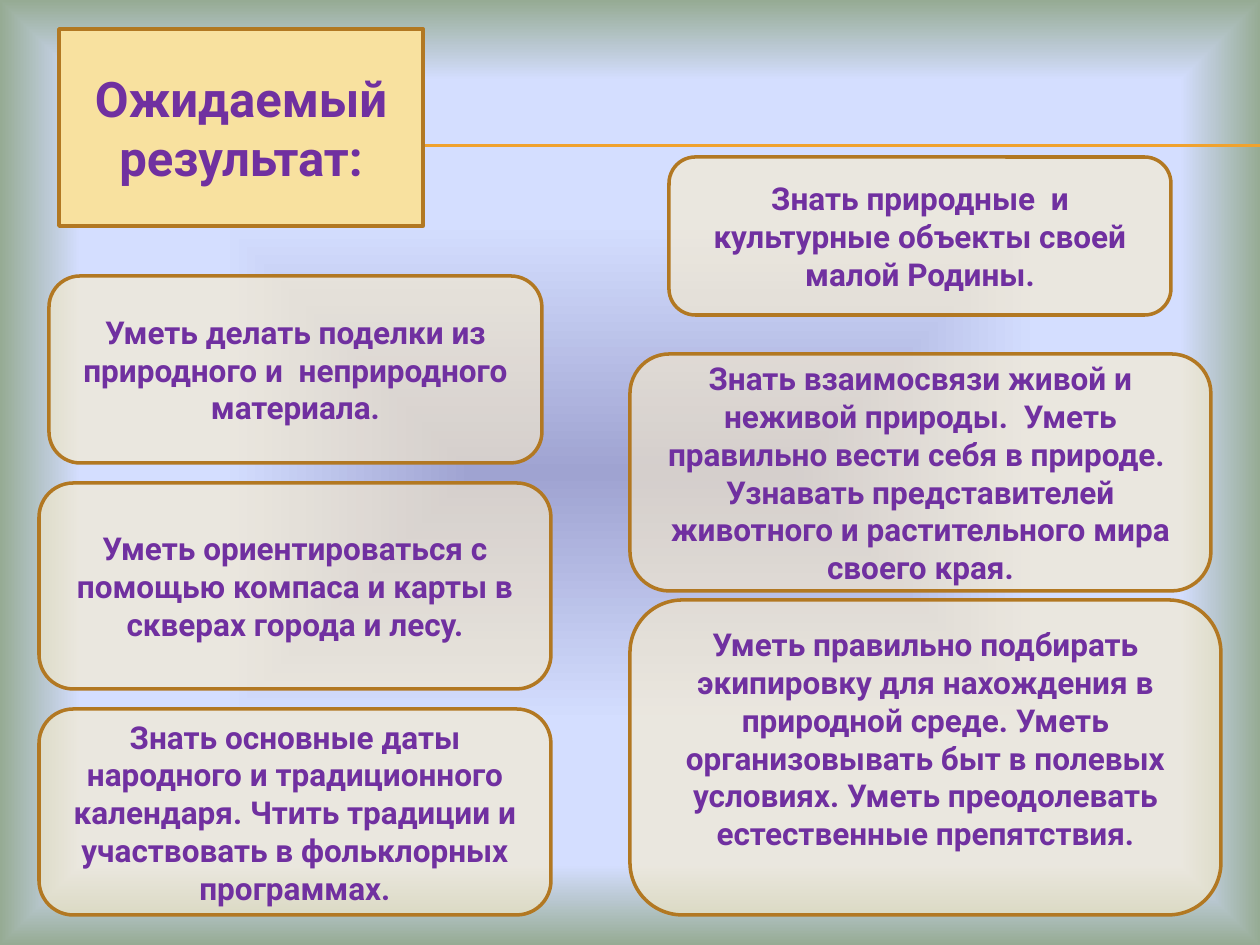
from pptx import Presentation
from pptx.dml.color import RGBColor
from pptx.enum.shapes import MSO_CONNECTOR, MSO_SHAPE
from pptx.enum.text import MSO_ANCHOR, MSO_AUTO_SIZE, PP_ALIGN
from pptx.oxml import parse_xml
from pptx.oxml.ns import nsdecls, qn
from pptx.util import Pt
from lxml.etree import SubElement

PX = 914400 // 126
WIDE, HIGH = 1260, 945
FONT = "Roboto"
COLORS = {"text": "7030A0", "edge": "B27822", "title": "F8E19F",
          "card": "FBEEC9", "rule": "F0A22E"}
GLOW = [(0, "9FA3D1"), (53, "D4DEFF"), (83, "D4DEFF"), (100, "96AB94")]
ALPHA = 59
RULES = [145, 146]
TITLE = ("Ожидаемый результат:", (59, 29, 364, 197))
# text, (left, top, width, height), bottom inset
CARDS = [
    ("Знать природные  и культурные объекты своей малой Родины.",
     (669, 157, 502, 158), 6),
    ("Уметь правильно подбирать экипировку для нахождения в природной среде. "
     "Уметь организовывать быт в полевых условиях. Уметь преодолевать "
     "естественные препятствия.", (630, 600, 591, 315), 44),
    ("Знать взаимосвязи живой и неживой природы.  Уметь правильно вести себя "
     "в природе.  Узнавать представителей животного и растительного мира "
     "своего края.", (630, 354, 581, 237), 6),
    ("Уметь делать поделки из природного и  неприродного материала.",
     (49, 276, 493, 187), 6),
    ("Знать основные даты народного и традиционного календаря. Чтить традиции "
     "и участвовать в фольклорных программах.", (39, 709, 512, 206), 6),
    ("Уметь ориентироваться с помощью компаса и карты в скверах города и лесу.",
     (39, 483, 512, 206), 6),
]


def color(name):
    return RGBColor.from_string(COLORS[name])


def paint(slide):
    """Fill the background with a gradient that spreads from the centre."""
    slide.background.fill.solid()
    back = slide.element.find(".//" + qn("p:bgPr"))
    stops = "".join(f'<a:gs pos="{pos * 1000}"><a:srgbClr val="{hue}"/></a:gs>'
                    for pos, hue in GLOW)
    back.replace(back[0], parse_xml(
        f'<a:gradFill {nsdecls("a")} rotWithShape="1"><a:gsLst>{stops}</a:gsLst>'
        '<a:path path="rect"><a:fillToRect l="50000" t="50000" r="50000" '
        'b="50000"/></a:path></a:gradFill>'.replace('"rect"', '"shape"')))


def rule(slide, y):
    line = slide.shapes.add_connector(
        MSO_CONNECTOR.STRAIGHT, 70 * PX, y * PX, WIDE * PX, y * PX)
    line.line.color.rgb = color("rule")
    line.line.width = Pt(0.75)
    SubElement(line.element.spPr, qn("a:effectLst"))


def style(shape, text, fill, size, inset=6):
    shape.fill.solid()
    shape.fill.fore_color.rgb = color(fill)
    shape.line.color.rgb = color("edge")
    shape.line.width = Pt(2)
    frame = shape.text_frame
    frame.text = text
    frame.word_wrap = True
    frame.auto_size = MSO_AUTO_SIZE.NONE
    frame.vertical_anchor = MSO_ANCHOR.MIDDLE
    frame.margin_bottom = inset * PX
    par = frame.paragraphs[0]
    par.alignment = PP_ALIGN.CENTER
    font = par.runs[0].font
    font.name, font.size, font.bold = FONT, Pt(size), True
    font.color.rgb = color("text")


def head(slide):
    """Turn the title placeholder into a rounded box."""
    text, box = TITLE
    title = slide.shapes.title
    title.left, title.top, title.width, title.height = (n * PX for n in box)
    title.element.spPr.insert(1, parse_xml(
        f'<a:prstGeom {nsdecls("a")} prst="roundRect"><a:avLst/></a:prstGeom>'))
    style(title, text, "title", 28)


def card(slide, text, box, inset):
    shape = slide.shapes.add_shape(
        MSO_SHAPE.ROUNDED_RECTANGLE, *(n * PX for n in box))
    shape.shadow.inherit = False
    style(shape, text, "card", 18, inset)
    hue = shape.element.spPr.find(qn("a:solidFill"))[0]
    SubElement(hue, qn("a:alpha"), val=str(ALPHA * 1000))


def main():
    deck = Presentation()
    deck.slide_width, deck.slide_height = WIDE * PX, HIGH * PX
    slide = deck.slides.add_slide(deck.slide_layouts[5])
    paint(slide)
    for y in RULES:
        rule(slide, y)
    tree = slide.shapes.title.element.getparent()
    tree.append(slide.shapes.title.element)  # the title box covers the rules
    head(slide)
    for text, box, inset in CARDS:
        card(slide, text, box, inset)
    deck.save("out.pptx")


if __name__ == "__main__":
    main()
